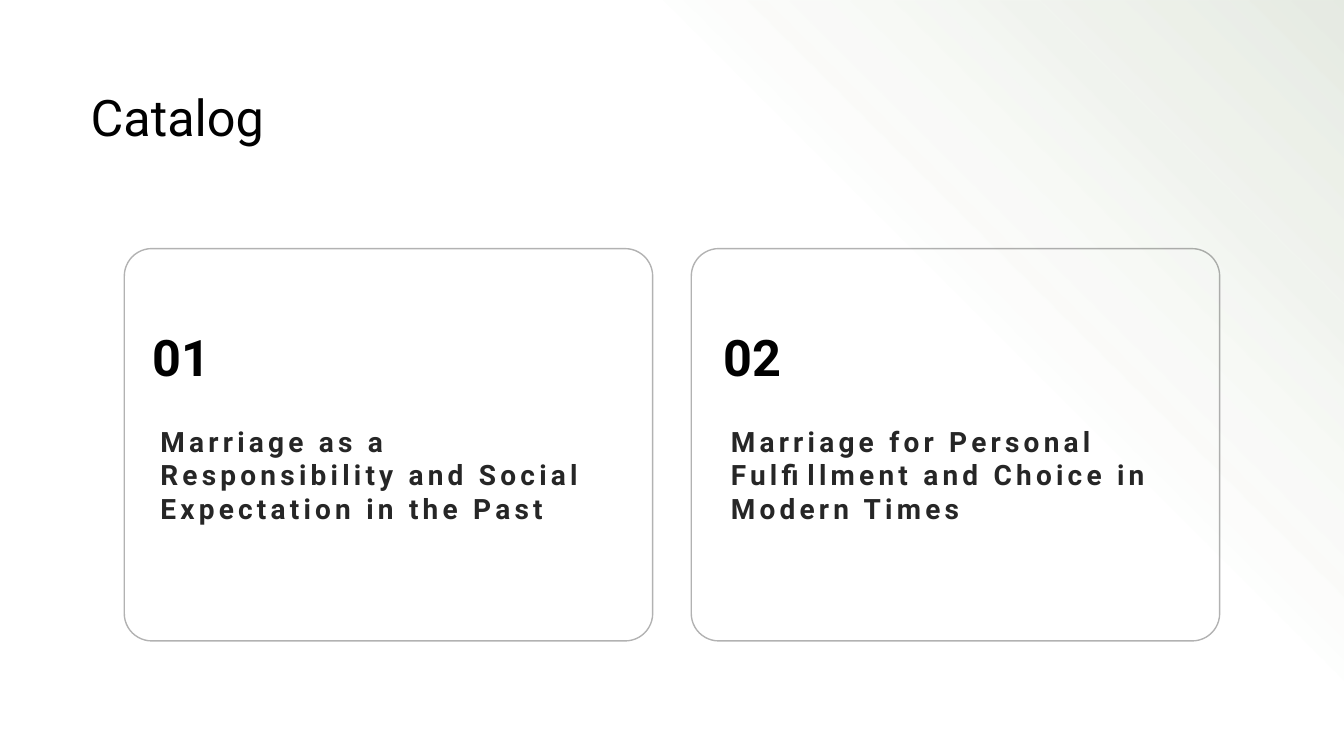
"""Build a catalog slide with two numbered cards over a soft corner glow."""
from dataclasses import dataclass

from pptx import Presentation, oxml as ox, util as u
from pptx.dml.color import RGBColor as Rgb
from pptx.enum import shapes as sh, text as tx
from pptx.oxml.ns import nsdecls, qn

WIDE, HIGH = u.Inches(13.333), u.Inches(7.5)
COLS, ROWS = 16, 9


@dataclass(frozen=True)
class Theme:
    font: str = "Roboto"
    ink: str = "000000"
    body: str = "262626"
    glow: str = "3F6128"
    fade: str = "548235"
    large: int = 36
    small: int = 20
    track: int = 3
    edge: int = 1
    edge_alpha: int = 30
    glow_alpha: int = 13


@dataclass(frozen=True)
class Box:
    col: float
    row: float
    cols: float
    rows: float

    def move(self, step: float) -> "Box":
        return Box(self.col + step, self.row, self.cols, self.rows)

    def rect(self) -> tuple[int, int, int, int]:
        return (int(self.col * WIDE / COLS), int(self.row * HIGH / ROWS),
                int(self.cols * WIDE / COLS), int(self.rows * HIGH / ROWS))


@dataclass(frozen=True)
class Card:
    number: str
    label: str


THEME = Theme()
GLOW = Box(7.45, 0, 8.55, 9)
TITLE = Box(1.08, 0.96, 13.45, 0.85)
FRAME = Box(1.48, 2.96, 6.29, 4.67)
NUMBER = Box(1.82, 3.8, 4.02, 0.89)
LABEL = Box(1.91, 5.05, 5.54, 1.67)
FRAME_STEP, TEXT_STEP = 6.75, 6.79
CARDS = (
    Card("01", "Marriage as a Responsibility and Social Expectation in the Past"),
    Card("02", "Marriage for Personal Fulfillment and Choice in Modern Times"),
)


def add_text(slide, box: Box, words: str, size: int, color: str,
             bold: bool = False, middle: bool = True, track: int = 0) -> None:
    frame = slide.shapes.add_textbox(*box.rect()).text_frame
    frame.word_wrap = True
    frame.margin_left = frame.margin_right = 0
    frame.margin_top = frame.margin_bottom = 0
    anchor = tx.MSO_ANCHOR
    frame.vertical_anchor = anchor.MIDDLE if middle else anchor.TOP
    para = frame.paragraphs[0]
    para.text = words
    font = para.font
    font.name, font.size, font.bold = THEME.font, u.Pt(size), bold
    font.color.rgb = Rgb.from_string(color)
    if track:
        para.runs[0]._r.get_or_add_rPr().set("spc", str(track * 100))


def add_glow(slide) -> None:
    glow = slide.shapes.add_shape(sh.MSO_SHAPE.RECTANGLE, *GLOW.rect())
    glow.shadow.inherit = False
    glow.line.fill.background()
    stops = ((0, THEME.glow, THEME.glow_alpha), (47, THEME.fade, 0))
    marks = "".join(
        f'<a:gs pos="{pos * 1000}"><a:srgbClr val="{color}">'
        f'<a:alpha val="{alpha * 1000}"/></a:srgbClr></a:gs>'
        for pos, color, alpha in stops)
    fill = ox.parse_xml(
        f'<a:gradFill {nsdecls("a")} rotWithShape="1"><a:gsLst>{marks}</a:gsLst>'
        '<a:path path="circle"><a:fillToRect l="100000" b="100000"/></a:path>'
        '</a:gradFill>')
    glow._element.spPr.find(qn("a:prstGeom")).addnext(fill)


def add_frame(slide, box: Box) -> None:
    frame = slide.shapes.add_shape(sh.MSO_SHAPE.ROUNDED_RECTANGLE, *box.rect())
    frame.shadow.inherit = False
    frame.adjustments[0] = 0.07
    frame.fill.background()
    frame.line.width = u.Pt(THEME.edge)
    frame.line.color.rgb = Rgb.from_string(THEME.ink)
    color = frame._element.spPr.find(f'{qn("a:ln")}//{qn("a:srgbClr")}')
    alpha = ox.parse_xml(
        f'<a:alpha {nsdecls("a")} val="{THEME.edge_alpha * 1000}"/>')
    color.append(alpha)


def add_card(slide, card: Card, index: int) -> None:
    add_frame(slide, FRAME.move(index * FRAME_STEP))
    shift = index * TEXT_STEP
    add_text(slide, NUMBER.move(shift), card.number, THEME.large, THEME.ink,
             bold=True)
    add_text(slide, LABEL.move(shift), card.label, THEME.small, THEME.body,
             bold=True, middle=False, track=THEME.track)


def main() -> None:
    deck = Presentation()
    deck.slide_width, deck.slide_height = WIDE, HIGH
    slide = deck.slides.add_slide(deck.slide_layouts[6])
    add_glow(slide)
    add_text(slide, TITLE, "Catalog", THEME.large, THEME.ink)
    for index, card in enumerate(CARDS):
        add_card(slide, card, index)
    deck.save("out.pptx")


if __name__ == "__main__":
    main()
